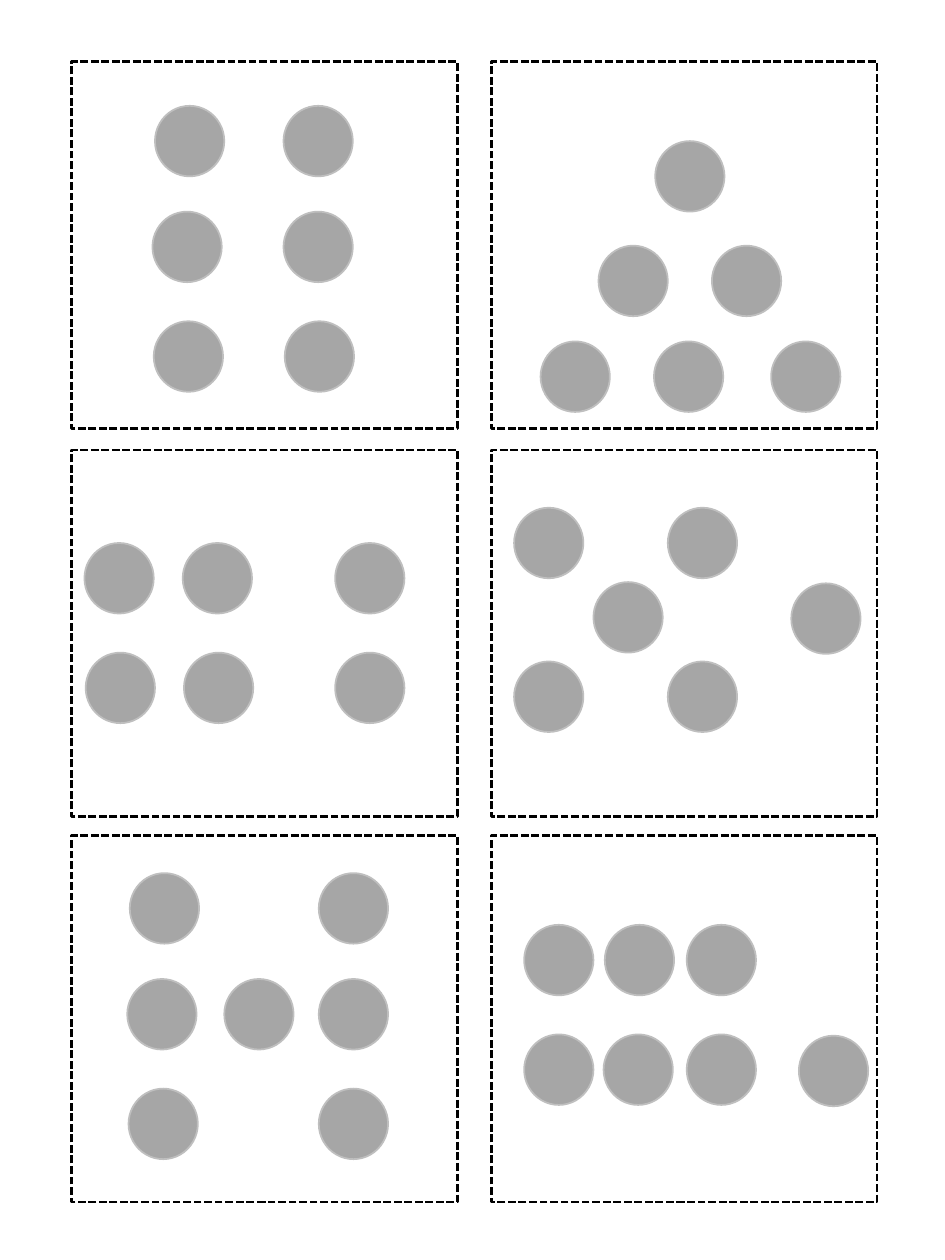
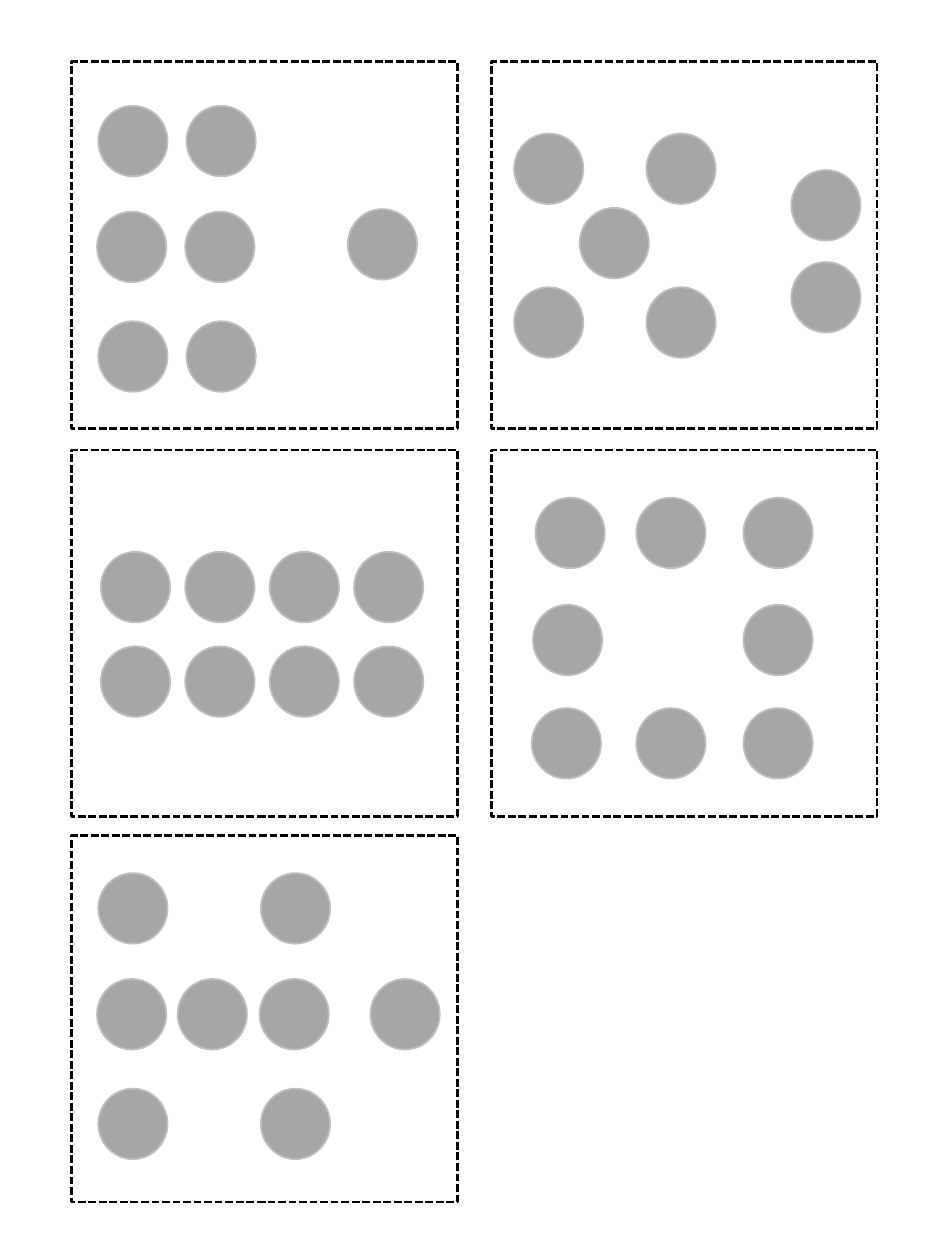
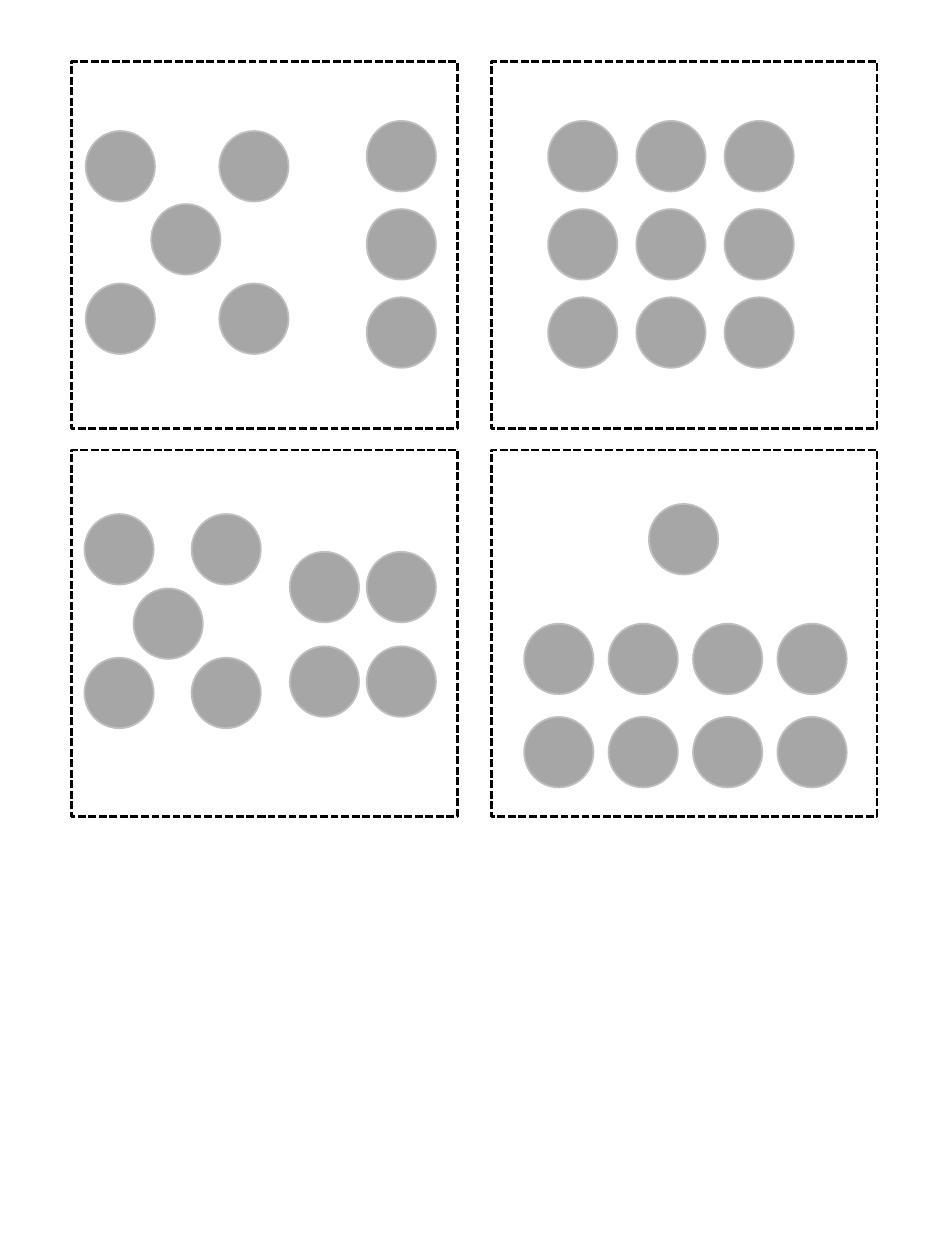
import pptx
import pptx.dml.color
import pptx.enum.dml
import pptx.enum.shapes
import pptx.util

Inches = pptx.util.Inches
KIND = pptx.enum.shapes.MSO_SHAPE
COLS = (0.57, 3.9)
ROWS = (0.49, 3.57, 6.63)
CARD = (3.06, 2.91)
DOT = (0.55, 0.56)
DASH = pptx.enum.dml.MSO_LINE.SQUARE_DOT
EDGE = {"card": {"width": pptx.util.Pt(1.5), "dash_style": DASH},
        "dot": {"width": pptx.util.Pt(1)}}


def tint(code):
    """Turn a hex string into a colour."""
    return pptx.dml.color.RGBColor.from_string(code)


def draw(slide, kind, spot, size, edge, line, fill=None):
    """Add a flat shape with an outline and an optional fill."""
    shape = slide.shapes.add_shape(kind, *map(Inches, spot + size))
    shape.shadow.inherit = False
    if fill:
        shape.fill.solid()
        shape.fill.fore_color.rgb = tint(fill)
    else:
        shape.fill.background()
    shape.line.color.rgb = tint(line)
    for name, value in EDGE[edge].items():
        setattr(shape.line, name, value)


def lines(*rows):
    """List the dots of rows, each given as a top and its lefts."""
    return [(x, top) for top, *lefts in rows for x in lefts]


def grid(left, top, wide, high, dx, dy):
    """List the dots of an evenly spaced grid."""
    return [(left + i * dx, top + j * dy)
            for j in range(high) for i in range(wide)]


def five(left, top, dx, dy, mid):
    """List four corner dots and one dot at the given middle."""
    return grid(left, top, 2, 2, dx, dy) + [mid]


def card(slide, left, top, dots):
    """Draw a dashed card and place its dots inside it."""
    draw(slide, KIND.RECTANGLE, (left, top), CARD, "card", "000000")
    for x, y in dots:
        draw(slide, KIND.OVAL, (left + x, top + y), DOT, "dot",
             "BFBFBF", "A6A6A6")


def sheet(deck, cards):
    """Add a slide and lay its cards out two to a row."""
    slide = deck.slides.add_slide(deck.slide_layouts[6])
    for i, dots in enumerate(cards):
        card(slide, COLS[i % 2], ROWS[i // 2], dots)


SHEETS = [
    [
        lines((0.35, 0.66, 1.68), (1.19, 0.64, 1.68), (2.06, 0.65, 1.69)),
        lines((0.63, 1.3), (1.46, 0.85, 1.75), (2.22, 0.39, 1.29, 2.22)),
        lines((0.74, 0.1, 0.88, 2.09), (1.61, 0.11, 0.89, 2.09)),
        five(0.18, 0.46, 1.22, 1.22, (0.81, 1.05)) + [(2.38, 1.06)],
        lines((0.3, 0.46, 1.96), (1.14, 0.44, 1.21, 1.96),
              (2.01, 0.45, 1.96)),
        lines((0.71, 0.26, 0.9, 1.55), (1.58, 0.26, 0.89, 1.55),
              (1.59, 2.44)),
    ],
    [
        lines((0.35, 0.21, 0.91), (1.19, 0.2, 0.9), (2.06, 0.21, 0.91),
              (1.17, 2.19)),
        five(0.18, 0.57, 1.05, 1.22, (0.7, 1.16))
        + grid(2.38, 0.86, 1, 2, 0, 0.73),
        grid(0.23, 0.81, 4, 2, 0.67, 0.75),
        lines((0.38, 0.35, 1.15, 2), (1.23, 0.33, 2), (2.05, 0.32, 1.15, 2)),
        lines((0.3, 0.21, 1.5), (1.14, 0.2, 0.84, 1.49, 2.37),
              (2.01, 0.21, 1.5)),
    ],
    [
        five(0.11, 0.55, 1.06, 1.21, (0.63, 1.13))
        + grid(2.34, 0.47, 1, 3, 0, 0.7),
        grid(0.45, 0.47, 3, 3, 0.7, 0.7),
        five(0.1, 0.51, 0.85, 1.14, (0.49, 1.1))
        + grid(1.73, 0.81, 2, 2, 0.61, 0.75),
        [(1.25, 0.43)] + grid(0.26, 1.38, 4, 2, 0.67, 0.74),
    ],
]


def main():
    """Build the dot cards and save them."""
    deck = pptx.Presentation()
    deck.slide_width, deck.slide_height = Inches(7.5), Inches(10)
    for cards in SHEETS:
        sheet(deck, cards)
    deck.save("out.pptx")


if __name__ == "__main__":
    main()
